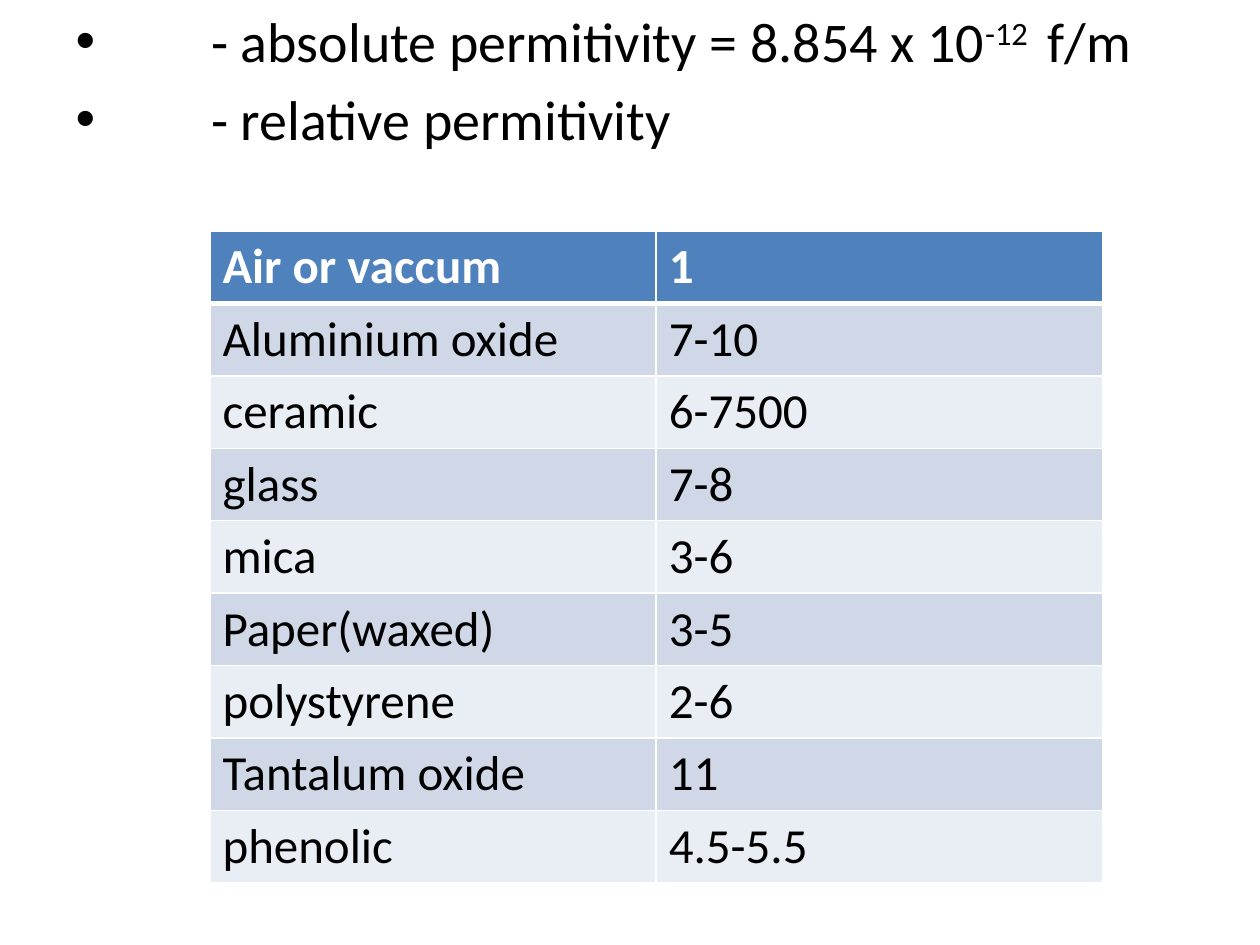
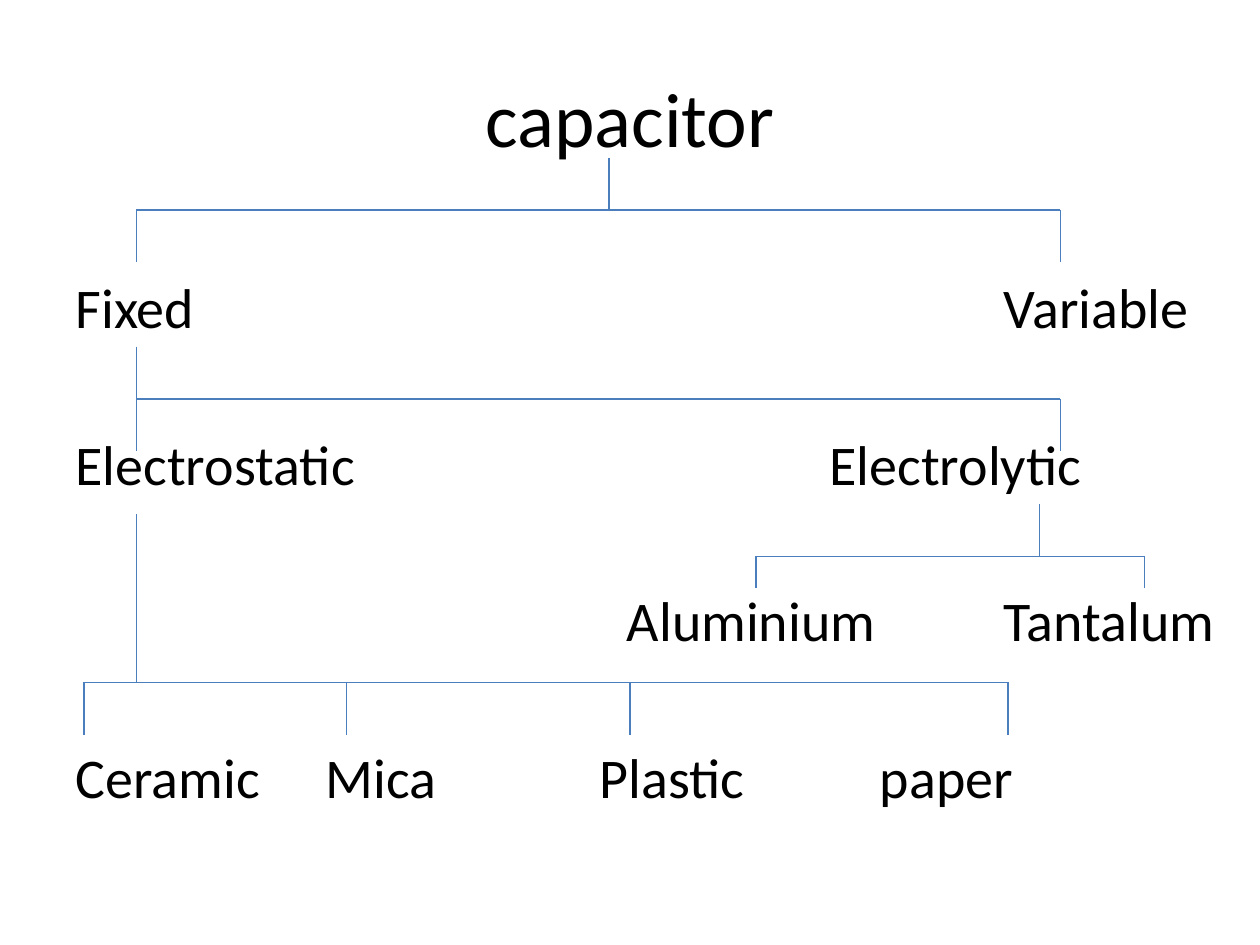
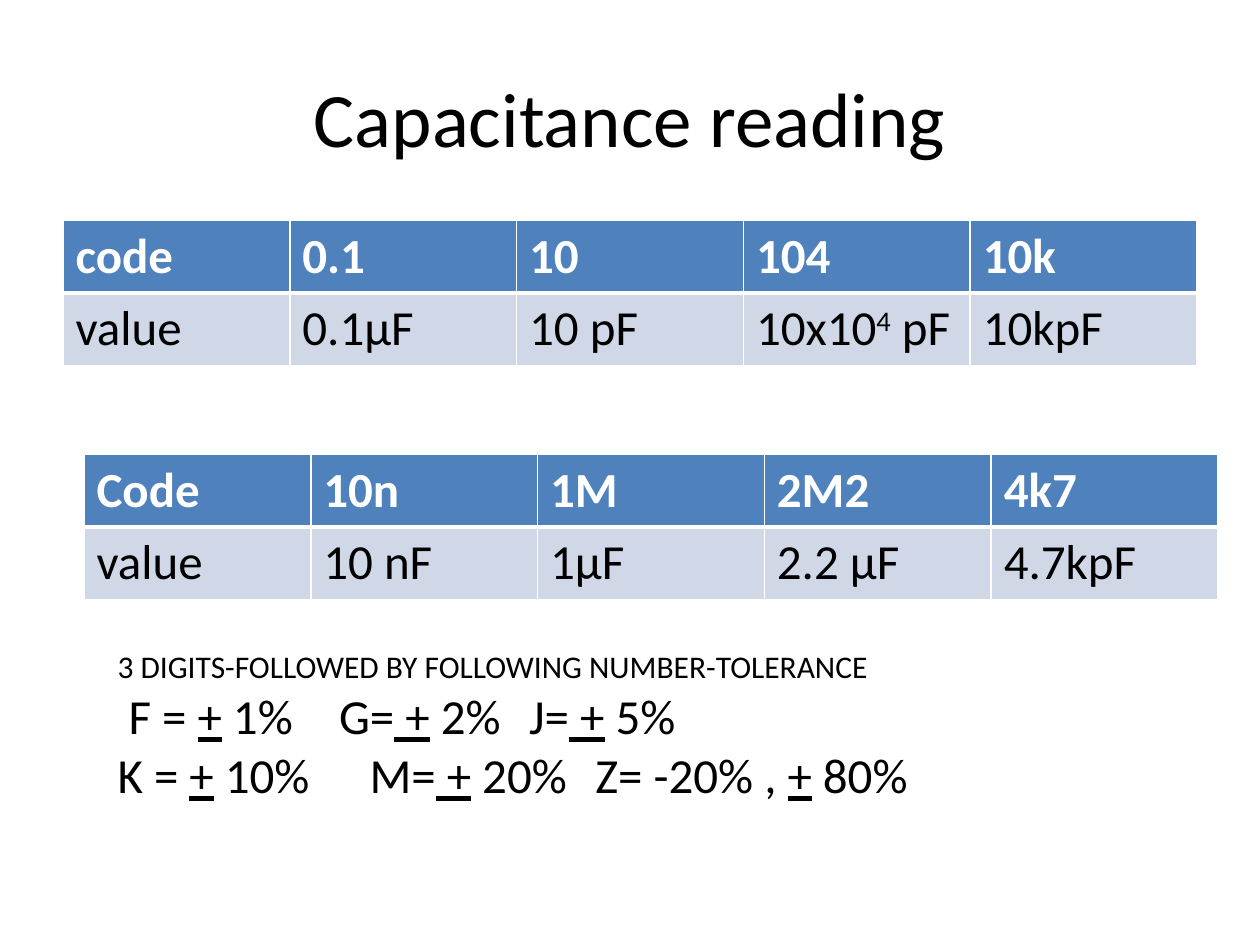
from lxml.etree import SubElement
from pptx import Presentation
from pptx.dml.color import RGBColor
from pptx.enum.shapes import MSO_CONNECTOR
from pptx.enum.text import MSO_ANCHOR, PP_ALIGN
from pptx.oxml import parse_xml
from pptx.oxml.ns import nsdecls, qn
from pptx.util import Inches, Pt

BLACK = RGBColor(0x00, 0x00, 0x00)
WHITE = RGBColor(0xFF, 0xFF, 0xFF)
HEAD = RGBColor(0x4F, 0x81, 0xBD)
BANDS = (RGBColor(0xE9, 0xED, 0xF4), RGBColor(0xD0, 0xD8, 0xE8))
LINE = RGBColor(0x4B, 0x7E, 0xBC)
FONT = "Calibri"


def unit(count):
    return Inches(count / 12)


class Deck:
    def __init__(self):
        self.show = Presentation()
        self.show.slide_width = unit(120)
        self.show.slide_height = unit(90)

    def page(self):
        self.slide = self.show.slides.add_slide(self.show.slide_layouts[6])

    def style(self, para, size, color=BLACK, bold=False):
        font = para.font
        font.name, font.size, font.bold = FONT, Pt(size), bold
        font.color.rgb = color

    def fill(self, para, parts):
        if isinstance(parts, str):
            parts = [(parts, "")]
        for words, mark in parts:
            run = para.add_run()
            run.text = words
            if mark == "under":
                run.font.underline = True
            elif mark == "super":
                run._r.get_or_add_rPr().set("baseline", "30000")

    def text(self, col, row, wide, high, lines, size=32):
        box = self.slide.shapes.add_textbox(*map(unit, (col, row, wide, high)))
        frame = box.text_frame
        frame.word_wrap = True
        frame.margin_left = frame.margin_right = 0
        frame.margin_top = frame.margin_bottom = 0
        for place, parts in enumerate(lines):
            para = frame.add_paragraph() if place else frame.paragraphs[0]
            self.fill(para, parts)
            self.style(para, size)
        return frame

    def title(self, words):
        frame = self.text(6, 3.6, 108, 15, [words], 44)
        frame.vertical_anchor = MSO_ANCHOR.MIDDLE
        frame.paragraphs[0].alignment = PP_ALIGN.CENTER

    def bullet(self, para, hang):
        para.space_before = Pt(6.4)
        props = para._p.get_or_add_pPr()
        props.set("marL", str(unit(hang)))
        props.set("indent", str(-unit(hang)))
        SubElement(props, qn("a:buFont")).set("typeface", "Arial")
        SubElement(props, qn("a:buChar")).set("char", "•")

    def tabs(self, para, stops):
        group = SubElement(para._p.get_or_add_pPr(), qn("a:tabLst"))
        for stop in stops:
            tab = SubElement(group, qn("a:tab"))
            tab.set("pos", str(unit(stop)))
            tab.set("algn", "l")

    def edge(self, cell, row):
        props = cell._tc.get_or_add_tcPr()
        thick = {"T": 3 if row == 1 else 1, "B": 3 if row == 0 else 1}
        for place, side in enumerate("LRTB"):
            wide = Pt(thick.get(side, 1))
            props.insert(place, parse_xml(
                f'<a:ln{side} {nsdecls("a")} w="{wide}"><a:solidFill>'
                f'<a:srgbClr val="{WHITE}"/></a:solidFill></a:ln{side}>'))

    def table(self, col, row, wide, data):
        high = 6.9 * len(data)
        grid = self.slide.shapes.add_table(
            len(data), len(data[0]), *map(unit, (col, row, wide, high))).table
        for down, items in enumerate(data):
            for over, parts in enumerate(items):
                cell = grid.cell(down, over)
                cell.fill.solid()
                cell.fill.fore_color.rgb = BANDS[down % 2] if down else HEAD
                para = cell.text_frame.paragraphs[0]
                self.fill(para, parts)
                self.style(para, 28, BLACK if down else WHITE, not down)
                self.edge(cell, down)

    def line(self, *ends):
        link = self.slide.shapes.add_connector(
            MSO_CONNECTOR.STRAIGHT, *map(unit, ends))
        link.line.color.rgb = LINE
        link.line.width = Pt(0.75)
        SubElement(link._element.spPr, qn("a:effectLst"))

    def branch(self, stem, top, bar, low, drops):
        self.line(stem, top, stem, bar)
        self.line(min(drops), bar, max(drops), bar)
        for drop in drops:
            self.line(drop, bar, drop, low)


def values(deck):
    deck.page()
    frame = deck.text(7.2, 0.6, 105.6, 16, [
        [("- absolute permitivity = 8.854 x 10", ""), ("-12 ", "super"),
         (" f/m", "")],
        "- relative permitivity"])
    for para in frame.paragraphs:
        deck.bullet(para, 12.9)
    deck.table(20, 22, 85, [
        ("Air or vaccum", "1"),
        ("Aluminium oxide", "7-10"),
        ("ceramic", "6-7500"),
        ("glass", "7-8"),
        ("mica", "3-6"),
        ("Paper(waxed)", "3-5"),
        ("polystyrene", "2-6"),
        ("Tantalum oxide", "11"),
        ("phenolic", "4.5-5.5")])


def tree(deck):
    deck.page()
    deck.title("capacitor")
    tiers = [
        {"Fixed": 7.2, "Variable": 95.6},
        {"Electrostatic": 7.2, "Electrolytic": 79},
        {"Aluminium": 59.7, "Tantalum": 95.6},
        {"Ceramic": 7.2, "Mica": 31, "Plastic": 57.1, "paper": 83.8}]
    for level, names in enumerate(tiers):
        for name, col in names.items():
            wide = 28 if len(name) > 9 else 24
            deck.text(col, 26 + 14.9 * level, wide, 6.5, [name])
    deck.branch(58, 15, 20, 25, (13, 101))
    deck.branch(13, 33, 38, 43, (13, 101))
    deck.branch(13, 49, 65, 70, (8, 33, 60, 96))
    deck.branch(99, 48, 53, 56, (72, 109))


def codes(deck):
    deck.page()
    deck.title("Capacitance reading")
    deck.table(6, 21, 108, [
        ("code", "0.1", "10", "104", "10k"),
        ("value", "0.1µF", "10 pF",
         [("10x10", ""), ("4", "super"), (" pF", "")], "10kpF")])
    deck.table(8, 43.3, 108, [
        ("Code", "10n", "1M", "2M2", "4k7"),
        ("value", "10 nF", "1µF", "2.2 µF", "4.7kpF")])
    deck.text(11.2, 61.6, 96, 4, [
        "3 DIGITS-FOLLOWED BY FOLLOWING NUMBER-TOLERANCE"], 18)
    frame = deck.text(11.2, 65.3, 96, 12, [
        [(" F = ", ""), ("+", "under"), (" 1%\tG=", ""), (" +", "under"),
         (" 2%\tJ=", ""), (" +", "under"), (" 5%", "")],
        [("K = ", ""), ("+", "under"), (" 10%\tM=", ""), (" +", "under"),
         (" 20%\tZ= -20% , ", ""), ("+", "under"), (" 80%", "")]], 28)
    for para, stops in zip(frame.paragraphs, ((21.1, 39.2), (24, 45.5))):
        deck.tabs(para, stops)


def main():
    deck = Deck()
    for build in (values, tree, codes):
        build(deck)
    deck.show.save("out.pptx")


if __name__ == "__main__":
    main()
